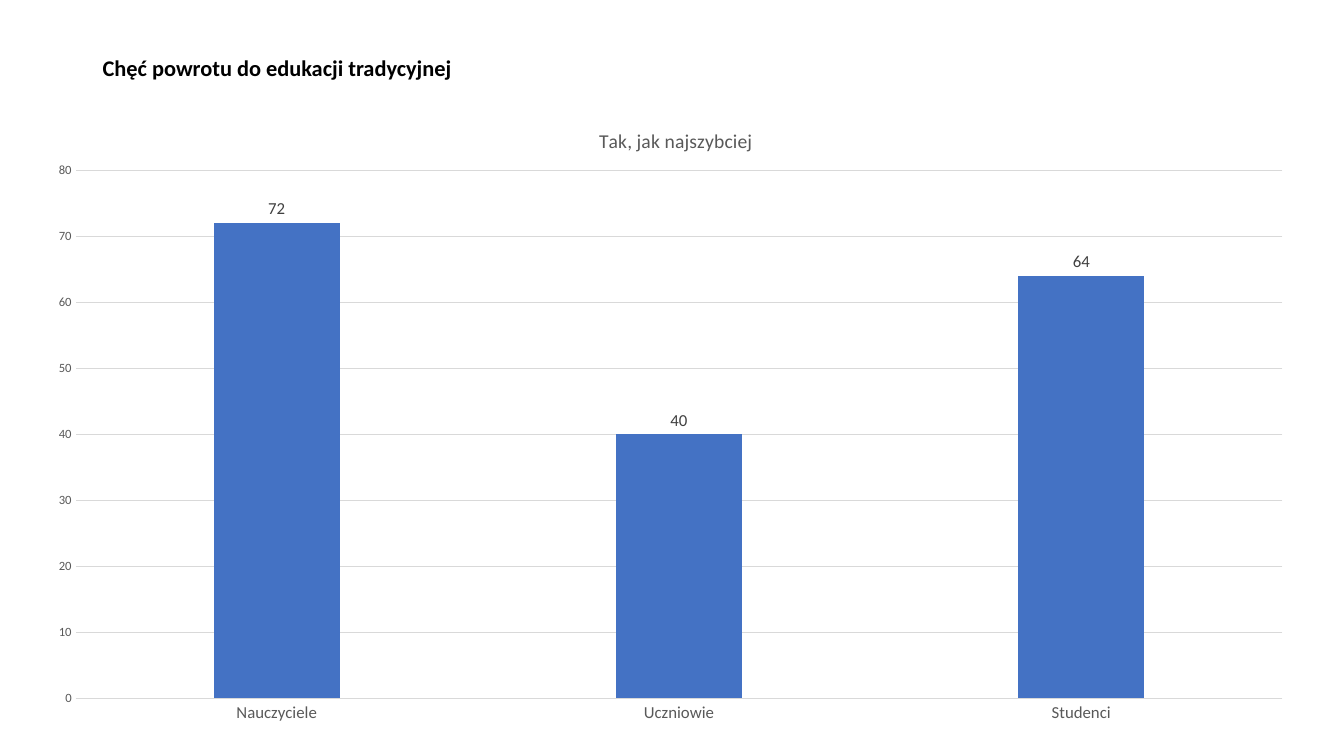
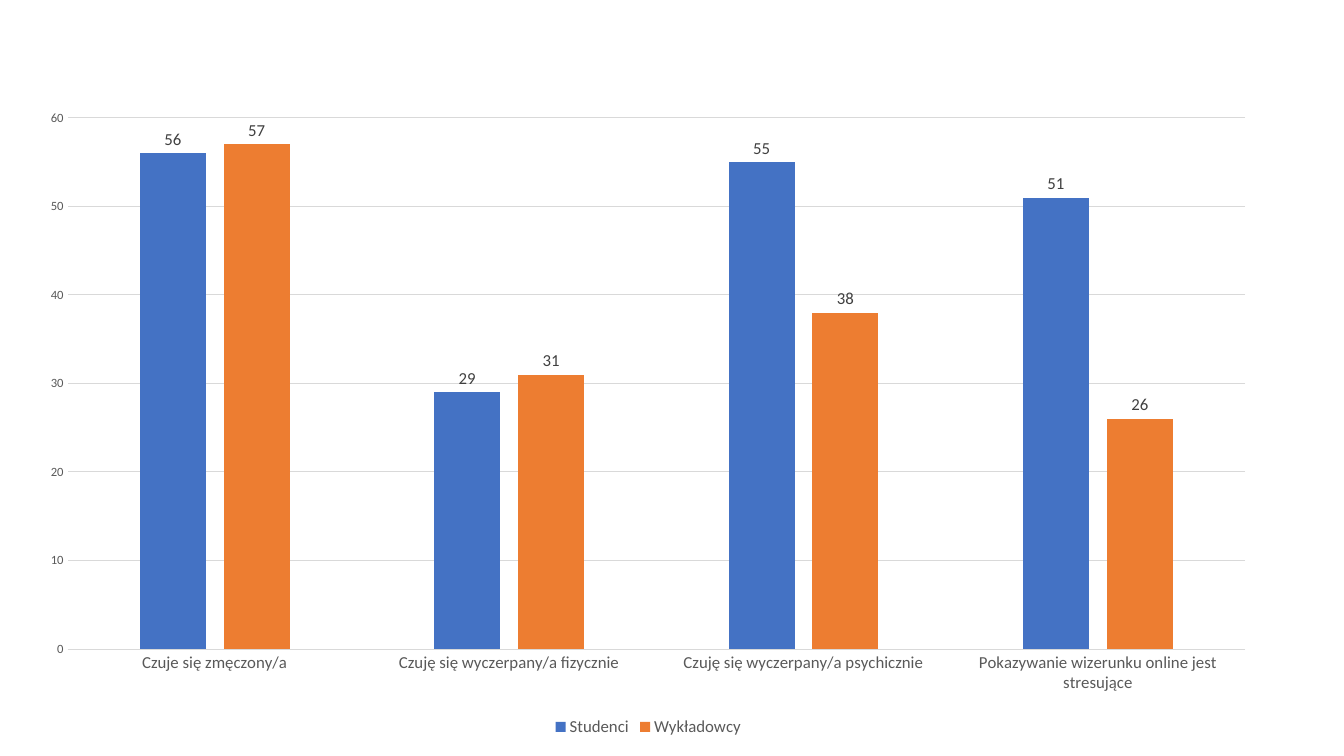
import dataclasses

import lxml.etree
import pptx
import pptx.chart.data
import pptx.dml.color
import pptx.enum.chart
import pptx.enum.text
import pptx.oxml.ns
import pptx.util

Inches = pptx.util.Inches
Pt = pptx.util.Pt
qn = pptx.oxml.ns.qn


def rgb(value):
    return pptx.dml.color.RGBColor.from_string(value)


@dataclasses.dataclass(frozen=True)
class Theme:
    font: str = "Calibri"
    heading: str = "000000"
    text: str = "595959"
    label: str = "404040"
    rule: str = "D9D9D9"
    series: tuple = ("4472C4", "ED7D31")
    heading_size: float = 16
    title_size: float = 14
    text_size: float = 12
    scale_size: float = 9
    base_size: float = 10
    rule_width: float = 0.75


@dataclasses.dataclass(frozen=True)
class Box:
    left: float
    top: float
    width: float
    height: float

    def lengths(self):
        return [Inches(value) for value in dataclasses.astuple(self)]

    def shares_of(self, outer):
        """Shares of the outer box, for a box measured from its corner."""
        return {"x": self.left / outer.width, "y": self.top / outer.height,
                "w": self.width / outer.width, "h": self.height / outer.height}


THEME = Theme()
SLIDE = Box(0, 0, 13.33, 7.5)


def style_font(font, size, color, bold=False):
    font.name = THEME.font
    font.size = Pt(size)
    font.bold = bold
    font.color.rgb = rgb(color)


def style_line(line):
    line.color.rgb = rgb(THEME.rule)
    line.width = Pt(THEME.rule_width)


def set_layout(parent, position, shares, inner=False):
    """Fix the place of a chart part as shares of the chart."""
    for old_layout in parent.findall(qn("c:layout")):
        parent.remove(old_layout)
    layout = lxml.etree.Element(qn("c:layout"))
    parent.insert(position, layout)
    manual = lxml.etree.SubElement(layout, qn("c:manualLayout"))
    settings = {"layoutTarget": "inner"} if inner else {}
    settings.update({f"{axis}Mode": "edge" for axis in "xy"})
    settings.update(shares)
    for name, value in settings.items():
        lxml.etree.SubElement(manual, qn(f"c:{name}")).set("val", str(value))


def add_heading(slide, box, text):
    frame = slide.shapes.add_textbox(*box.lengths()).text_frame
    frame.word_wrap = True
    frame.vertical_anchor = pptx.enum.text.MSO_ANCHOR.MIDDLE
    paragraph = frame.paragraphs[0]
    paragraph.line_spacing = 0.9
    run = paragraph.add_run()
    run.text = text
    style_font(run.font, THEME.heading_size, THEME.heading, bold=True)


def add_chart_title(chart, text):
    chart.has_title = True
    run = chart.chart_title.text_frame.paragraphs[0].add_run()
    run.text = text
    style_font(run.font, THEME.title_size, THEME.text)
    set_layout(chart.chart_title.element, 1, {"x": 0.44, "y": 0.04})


def add_legend(chart):
    chart.has_legend = True
    chart.legend.position = pptx.enum.chart.XL_LEGEND_POSITION.BOTTOM
    chart.legend.include_in_layout = False
    style_font(chart.legend.font, THEME.text_size, THEME.text)


def style_axes(chart, maximum):
    no_tick = pptx.enum.chart.XL_TICK_MARK.NONE
    sizes = ((chart.category_axis, THEME.text_size),
             (chart.value_axis, THEME.scale_size))
    for axis, size in sizes:
        axis.major_tick_mark = axis.minor_tick_mark = no_tick
        style_font(axis.tick_labels.font, size, THEME.text)
    style_line(chart.category_axis.format.line)
    scale = chart.value_axis
    scale.minimum_scale, scale.maximum_scale, scale.major_unit = 0, maximum, 10
    scale.format.line.fill.background()
    scale.has_major_gridlines = True
    style_line(scale.major_gridlines.format.line)


def style_series(plot):
    plot.gap_width, plot.overlap = 219, -27
    plot.vary_by_categories = False
    for series, color in zip(plot.series, THEME.series):
        series.format.fill.solid()
        series.format.fill.fore_color.rgb = rgb(color)
        series.invert_if_negative = False
        labels = series.data_labels
        labels.show_value = True
        labels.position = pptx.enum.chart.XL_LABEL_POSITION.OUTSIDE_END
        style_font(labels.font, THEME.text_size, THEME.label)


def add_column_chart(slide, box, plot_box, categories, series, maximum, title=None):
    data = pptx.chart.data.CategoryChartData()
    data.categories = categories
    for name, values in series.items():
        data.add_series(name, values)
    kind = pptx.enum.chart.XL_CHART_TYPE.COLUMN_CLUSTERED
    chart = slide.shapes.add_chart(kind, *box.lengths(), data).chart
    style_font(chart.font, THEME.base_size, THEME.heading)
    chart.has_title = chart.has_legend = False
    if title:
        add_chart_title(chart, title)
    if len(series) > 1:
        add_legend(chart)
    style_axes(chart, maximum)
    style_series(chart.plots[0])
    plot_area = chart.element.find(".//" + qn("c:plotArea"))
    set_layout(plot_area, 0, plot_box.shares_of(box), inner=True)


def build_return_slide(slide):
    add_heading(slide, Box(0.92, 0.4, 11.5, 0.57),
                "Chęć powrotu do edukacji tradycyjnej")
    add_column_chart(
        slide, Box(0.34, 0.97, 12.65, 6.34), Box(0.41, 0.72, 11.97, 5.24),
        ["Nauczyciele", "Uczniowie", "Studenci"],
        {"Series 1": (72, 40, 64)}, 80, "Tak, jak najszybciej")


def build_wellbeing_slide(slide):
    add_column_chart(
        slide, Box(0.26, 0.97, 12.34, 6.38), Box(0.41, 0.2, 11.68, 5.27),
        ["Czuje się zmęczony/a",
         "Czuję się wyczerpany/a fizycznie",
         "Czuję się wyczerpany/a psychicznie",
         "Pokazywanie wizerunku online jest stresujące"],
        {"Studenci": (56, 29, 55, 51), "Wykładowcy": (57, 31, 38, 26)}, 60)


def main():
    presentation = pptx.Presentation()
    presentation.slide_width = Inches(SLIDE.width)
    presentation.slide_height = Inches(SLIDE.height)
    blank = presentation.slide_layouts[6]
    for build in (build_return_slide, build_wellbeing_slide):
        build(presentation.slides.add_slide(blank))
    presentation.save("out.pptx")


if __name__ == "__main__":
    main()
